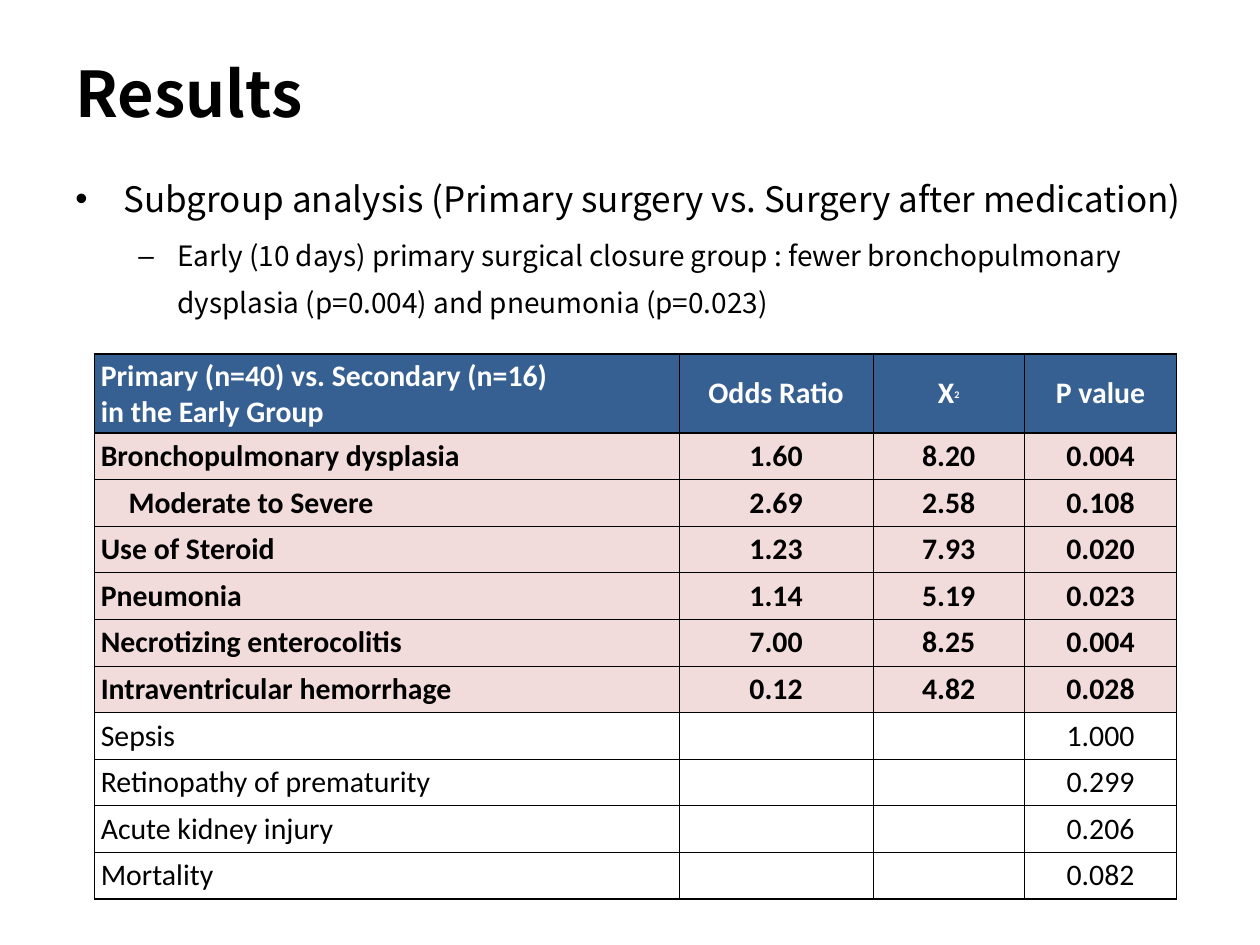
from dataclasses import dataclass

from lxml import etree
from pptx import Presentation
from pptx.dml.color import RGBColor
from pptx.enum.text import MSO_ANCHOR, PP_ALIGN
from pptx.oxml.ns import qn
from pptx.util import Inches, Pt

MIDDLE = MSO_ANCHOR.MIDDLE
TOP = MSO_ANCHOR.TOP
LEFT = PP_ALIGN.LEFT
CENTER = PP_ALIGN.CENTER
COLORS = {"black": "000000", "white": "FFFFFF", "header": "376092", "highlight": "F2DCDB"}
HEADING_FONT = "Noto Sans CJK KR"
TABLE_FONT = "Calibri"
THIN, THICK = 0.6, 1.6
COLUMN_WIDTHS = (4.64, 1.54, 1.2, 1.21)
HEADER_HEIGHT, ROW_HEIGHT = 0.61, 0.37


@dataclass
class Bullet:
    text: str
    size: float
    mark: str
    margin: float
    hanging: float
    level: int


@dataclass
class Outcome:
    name: str
    odds_ratio: str
    chi_square: str
    p_value: str
    significant: bool = True
    indent: float = 0


BULLETS = (
    Bullet("Subgroup analysis (Primary surgery vs. Surgery after medication)",
           20, "•", 0.38, 0.38, 0),
    Bullet("Early (10 days) primary surgical closure group : fewer bronchopulmonary "
           "dysplasia (p=0.004) and pneumonia (p=0.023)", 16, "–", 0.81, 0.31, 1),
)
HEADERS = ("Primary (n=40) vs. Secondary (n=16)\nin the Early Group",
           "Odds Ratio", "Χ", "P value")
OUTCOMES = (
    Outcome("Bronchopulmonary dysplasia", "1.60", "8.20", "0.004"),
    Outcome("Moderate to Severe", "2.69", "2.58", "0.108", indent=0.22),
    Outcome("Use of Steroid", "1.23", "7.93", "0.020"),
    Outcome("Pneumonia", "1.14", "5.19", "0.023"),
    Outcome("Necrotizing enterocolitis", "7.00", "8.25", "0.004"),
    Outcome("Intraventricular hemorrhage", "0.12", "4.82", "0.028"),
    Outcome("Sepsis", "", "", "1.000", False),
    Outcome("Retinopathy of prematurity", "", "", "0.299", False),
    Outcome("Acute kidney injury", "", "", "0.206", False),
    Outcome("Mortality", "", "", "0.082", False),
)


def format_span(span, font: str, size: float, color: str, bold: bool = False) -> None:
    """Set the typeface, size, colour and weight of a run."""
    span.font.name = font
    span.font.size = Pt(size)
    span.font.bold = bold
    span.font.color.rgb = RGBColor.from_string(COLORS[color])


def add_box(page, left: float, top: float, width: float, height: float, anchor):
    """Add a wrapping text box and return its text frame."""
    frame = page.shapes.add_textbox(
        Inches(left), Inches(top), Inches(width), Inches(height)).text_frame
    frame.word_wrap = True
    frame.vertical_anchor = anchor
    return frame


def add_title(page) -> None:
    """Add the slide title."""
    frame = add_box(page, 0.5, 0.24, 4.5, 0.99, MIDDLE)
    frame.text = "Results"
    format_span(frame.paragraphs[0].runs[0], HEADING_FONT, 36, "black", True)


def add_bullets(page) -> None:
    """Add the bulleted summary."""
    frame = add_box(page, 0.5, 1.23, 9, 1.42, TOP)
    frame.text = "\n".join(bullet.text for bullet in BULLETS)
    for para, bullet in zip(frame.paragraphs, BULLETS):
        para.level = bullet.level
        para.line_spacing = 1.4
        para.space_before = Pt(0.2 * bullet.size * bullet.level)
        properties = para._p.get_or_add_pPr()
        properties.set("marL", str(Inches(bullet.margin)))
        properties.set("indent", str(-Inches(bullet.hanging)))
        etree.SubElement(properties, qn("a:buFont")).set("typeface", "Arial")
        etree.SubElement(properties, qn("a:buChar")).set("char", bullet.mark)
        format_span(para.runs[0], HEADING_FONT, bullet.size, "black")


def set_borders(cell, top: float, bottom: float) -> None:
    """Draw the four borders of a cell."""
    properties = cell._tc.get_or_add_tcPr()
    for side, width in (("L", THIN), ("R", THIN), ("T", top), ("B", bottom)):
        line = etree.SubElement(properties, qn(f"a:ln{side}"))
        line.set("w", str(Pt(width)))
        fill = etree.SubElement(line, qn("a:solidFill"))
        etree.SubElement(fill, qn("a:srgbClr")).set("val", COLORS["black"])


def fill_cell(cell, text: str, fill: str, color: str, bold: bool, align,
              side_margin: float, top: float, bottom: float) -> None:
    """Write and style one table cell."""
    set_borders(cell, top, bottom)
    cell.fill.solid()
    cell.fill.fore_color.rgb = RGBColor.from_string(COLORS[fill])
    cell.vertical_anchor = MIDDLE
    cell.margin_left = cell.margin_right = Inches(side_margin)
    cell.margin_top = cell.margin_bottom = Inches(0.03)
    cell.text_frame.text = text
    for para in cell.text_frame.paragraphs:
        para.alignment = align
        for span in para.runs:
            format_span(span, TABLE_FONT, 17, color, bold)


def add_results_table(page) -> None:
    """Add the table of outcomes."""
    last = len(OUTCOMES)
    table = page.shapes.add_table(
        last + 1, len(HEADERS), Inches(0.75), Inches(2.81), Inches(sum(COLUMN_WIDTHS)),
        Inches(HEADER_HEIGHT + last * ROW_HEIGHT)).table
    for column, width in zip(table.columns, COLUMN_WIDTHS):
        column.width = Inches(width)
    for index, row in enumerate(table.rows):
        row.height = Inches(ROW_HEIGHT if index else HEADER_HEIGHT)
    for column, text in enumerate(HEADERS):
        fill_cell(table.cell(0, column), text, "header", "white", True,
                  CENTER if column else LEFT, 0.05, THICK, THICK)
    exponent = table.cell(0, 2).text_frame.paragraphs[0].add_run()
    exponent.text = "2"
    format_span(exponent, TABLE_FONT, 10, "white", True)
    exponent._r.get_or_add_rPr().set("baseline", "30000")
    for row, outcome in enumerate(OUTCOMES, 1):
        values = (outcome.name, outcome.odds_ratio, outcome.chi_square, outcome.p_value)
        for column, text in enumerate(values):
            fill_cell(table.cell(row, column), text,
                      "highlight" if outcome.significant else "white", "black",
                      outcome.significant, CENTER if column else LEFT,
                      0.01 if column else 0.05, THICK if row == 1 else THIN,
                      THICK if row == last else THIN)
        if outcome.indent:
            para = table.cell(row, 0).text_frame.paragraphs[0]
            para._p.get_or_add_pPr().set("marL", str(Inches(outcome.indent)))


def main() -> None:
    """Build and save the results slide."""
    deck = Presentation()
    deck.slide_width, deck.slide_height = Inches(10), Inches(7.5)
    page = deck.slides.add_slide(deck.slide_layouts[6])
    add_title(page)
    add_bullets(page)
    add_results_table(page)
    deck.save("out.pptx")


if __name__ == "__main__":
    main()
